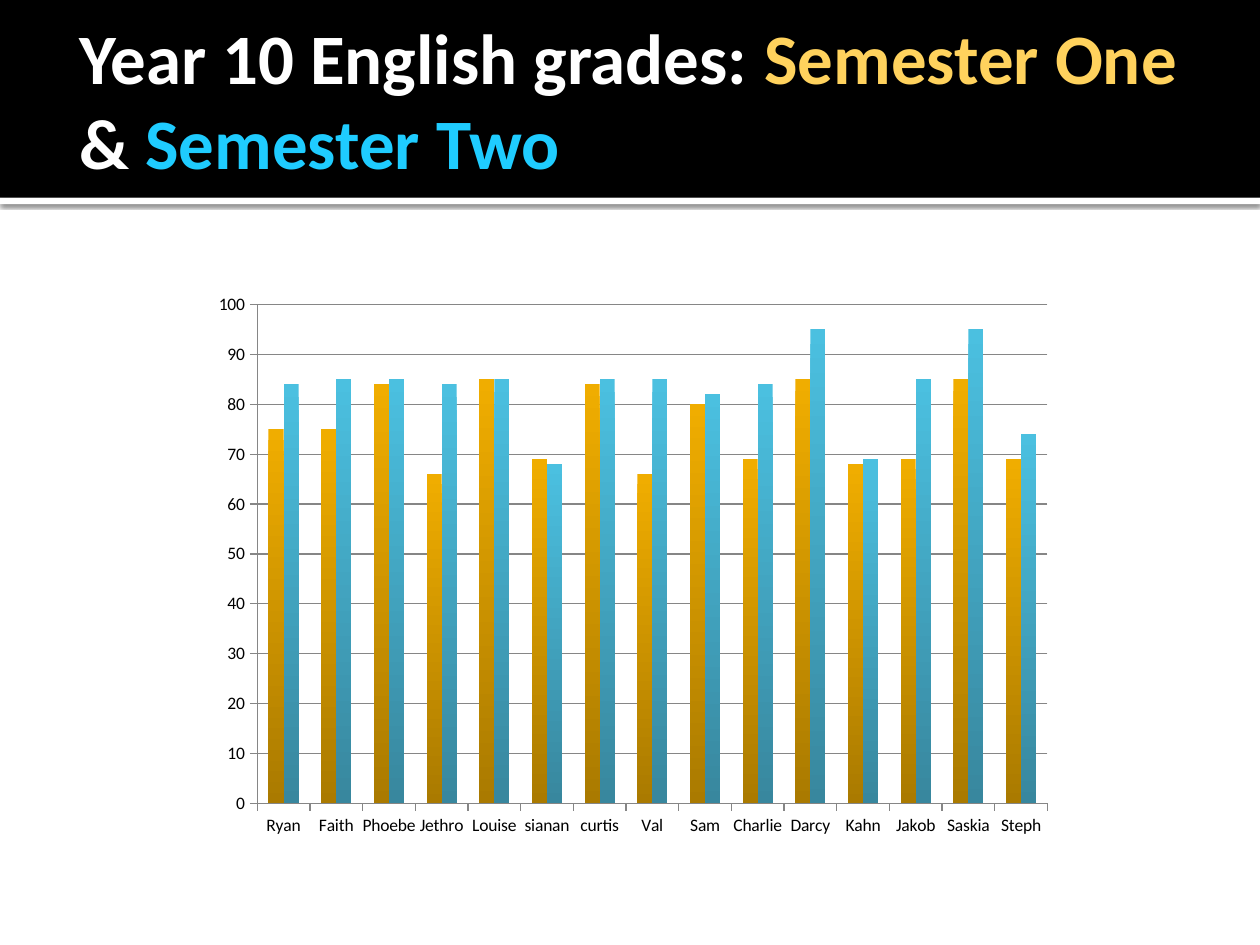
from dataclasses import dataclass

from lxml import etree
from pptx import Presentation
from pptx.chart.data import CategoryChartData
from pptx.dml.color import RGBColor
from pptx.enum import chart as ch, shapes, text
from pptx.oxml.ns import qn
from pptx.util import Inches, Pt


@dataclass(frozen=True)
class Theme:
    font: str = "Calibri"
    title_size: float = 40.5
    chart_size: float = 10
    black: str = "000000"
    white: str = "FFFFFF"
    yellow: str = "FFD25D"
    cyan: str = "1FCCFF"
    grid: str = "868686"


@dataclass(frozen=True)
class Band:
    top: float
    height: float
    color: str


@dataclass(frozen=True)
class Semester:
    name: str
    grades: tuple[int, ...]
    top_color: str
    bottom_color: str


THEME = Theme()
RULE = Band(1.57, 0.05, THEME.white)
HEADER = Band(0, 1.57, THEME.black)
TITLE_RUNS = (
    ("Year 10 English grades: ", THEME.white),
    ("Semester One", THEME.yellow),
    (" & ", THEME.white),
    ("Semester Two", THEME.cyan),
)
STUDENTS = ("Ryan", "Faith", "Phoebe", "Jethro", "Louise", "sianan", "curtis", "Val",
            "Sam", "Charlie", "Darcy", "Kahn", "Jakob", "Saskia", "Steph")
SEMESTERS = (
    Semester("Series 1", (75, 75, 84, 66, 85, 69, 84, 66, 80, 69, 85, 68, 69, 85, 69),
             "F0AD00", "AA7A00"),
    Semester("Series 2", (84, 85, 85, 84, 85, 68, 85, 85, 82, 84, 95, 69, 85, 95, 74),
             "4BC0E0", "38879E"),
)


def rgb(color: str) -> RGBColor:
    return RGBColor.from_string(color)


def add_band(s, band: Band):
    sp = s.shapes.add_shape(shapes.MSO_SHAPE.RECTANGLE, 0, Inches(band.top),
                            Inches(10), Inches(band.height))
    sp.shadow.inherit = False
    sp.fill.solid()
    sp.fill.fore_color.rgb = rgb(band.color)
    sp.line.fill.background()
    return sp


def add_drop_shadow(sp) -> None:
    effects = sp.fill._xPr.find(qn("a:effectLst"))
    shadow = etree.SubElement(effects, qn("a:outerShdw"), blurRad=str(Pt(2.5)),
                              dist=str(Pt(0.8)), dir="5400000", rotWithShape="0")
    color = etree.SubElement(shadow, qn("a:srgbClr"), val=THEME.black)
    etree.SubElement(color, qn("a:alpha"), val="60000")


def format_title(sp) -> None:
    sp.left, sp.top, sp.width, sp.height = map(Inches, (0.53, 0.41, 9, 1.37))
    tf = sp.text_frame
    tf.word_wrap = True
    tf.auto_size = text.MSO_AUTO_SIZE.NONE
    tf.vertical_anchor = text.MSO_ANCHOR.MIDDLE
    tf.margin_left, tf.margin_top, tf.margin_right = Inches(0.1), Inches(0.05), Inches(0.05)
    tf.margin_bottom = Inches(0.68)  # lifts the two lines into the header
    p = tf.paragraphs[0]
    p.alignment = text.PP_ALIGN.LEFT
    p.line_spacing = 1.0
    p.space_before = Pt(0)
    p.font.name, p.font.size, p.font.bold = THEME.font, Pt(THEME.title_size), True
    for wording, color in TITLE_RUNS:
        r = p.add_run()
        r.text = wording
        r.font.color.rgb = rgb(color)


def add_grades_chart(s) -> None:
    data = CategoryChartData()
    data.categories = STUDENTS
    for semester in SEMESTERS:
        data.add_series(semester.name, semester.grades)
    chart = s.shapes.add_chart(ch.XL_CHART_TYPE.COLUMN_CLUSTERED, Inches(1.6), Inches(2.25),
                               Inches(6.85), Inches(4.47), data).chart
    chart.has_legend = chart.has_title = False
    chart.font.name, chart.font.size = THEME.font, Pt(THEME.chart_size)
    chart.font.color.rgb = rgb(THEME.black)

    # Columns
    plot = chart.plots[0]
    plot.vary_by_categories = False
    plot.gap_width, plot.overlap = 150, 0
    for series, semester in zip(plot.series, SEMESTERS):
        fill = series.format.fill
        fill.gradient()
        fill.gradient_angle = 270
        for stop, color in zip(fill.gradient_stops,
                               (semester.top_color, semester.bottom_color)):
            stop.color.rgb = rgb(color)

    # Axes
    grades = chart.value_axis
    grades.minimum_scale, grades.maximum_scale, grades.major_unit = 0, 100, 10
    grades.has_major_gridlines = True
    for axis in (chart.category_axis, grades):
        axis.major_tick_mark = ch.XL_TICK_MARK.OUTSIDE
        axis.minor_tick_mark = ch.XL_TICK_MARK.NONE
    for part in (chart.category_axis, grades, grades.major_gridlines):
        part.format.line.color.rgb = rgb(THEME.grid)
        part.format.line.width = Pt(0.75)


def main() -> None:
    prs = Presentation()
    prs.slide_width, prs.slide_height = Inches(10), Inches(7.5)
    s = prs.slides.add_slide(prs.slide_layouts[5])

    # Header bands, kept behind the title
    title = s.shapes.title
    add_drop_shadow(add_band(s, RULE))
    add_band(s, HEADER)
    s.shapes._spTree.append(title._element)
    format_title(title)

    add_grades_chart(s)
    prs.save("out.pptx")


if __name__ == "__main__":
    main()
